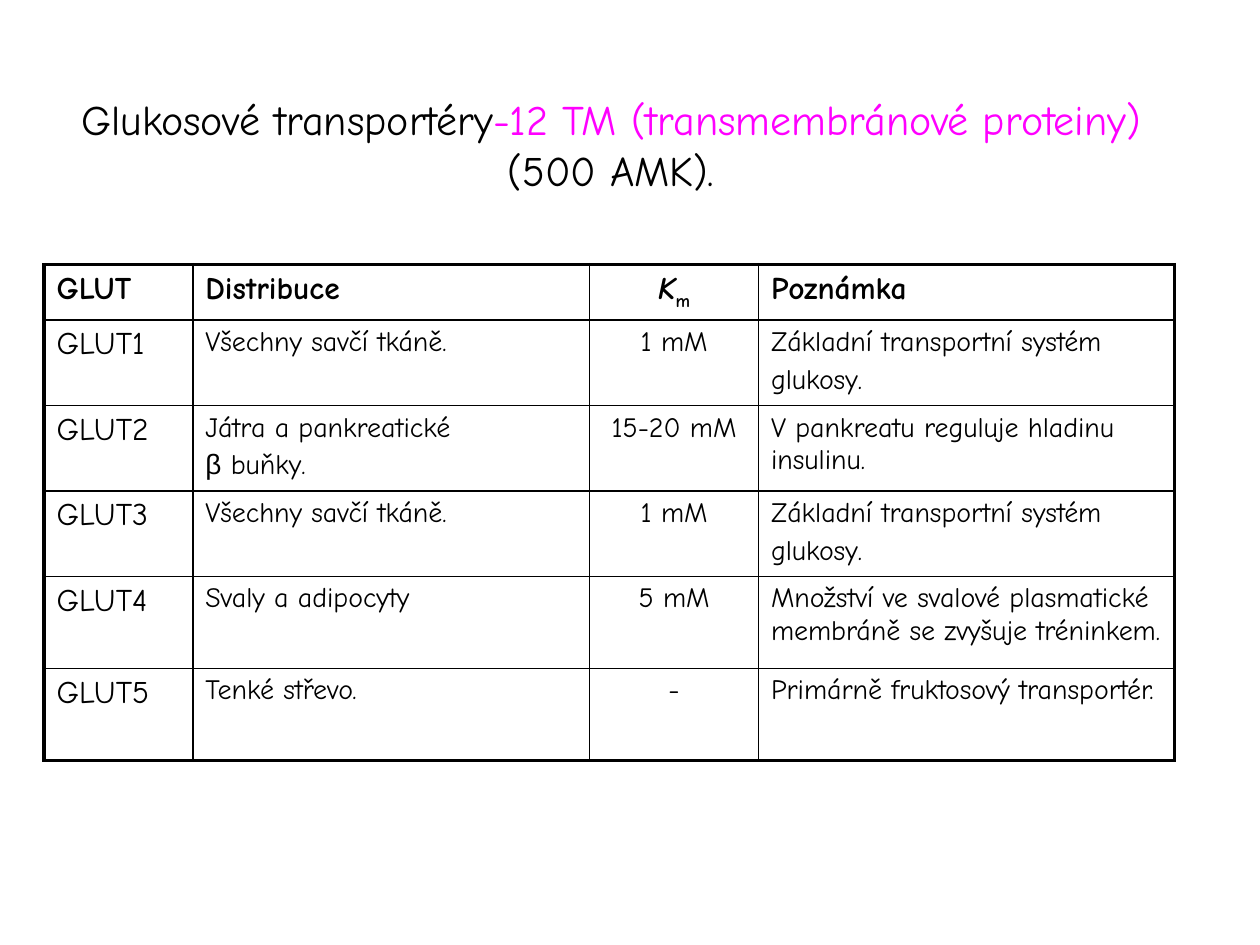
import pptx
import pptx.util
import pptx.dml.color
import pptx.enum.text
import pptx.oxml
import pptx.oxml.ns

Inches = pptx.util.Inches
Pt = pptx.util.Pt
ALIGN = pptx.enum.text.PP_ALIGN

COLORS = {"text": "000000", "accent": "FF00FF", "border": "000000"}
THICK, THIN = 2.25, 1
COLUMN_WIDTHS = [1.18, 3.15, 1.34, 3.3]
ROW_HEIGHTS = [0.44, 0.66, 0.66, 0.66, 0.73, 0.73]
COLUMN_ALIGNMENT = [ALIGN.LEFT, ALIGN.LEFT, ALIGN.CENTER, ALIGN.LEFT]

TITLE = [
    ("Glukosové transportéry", {}),
    ("-12 TM (transmembránové proteiny)", {"color": "accent"}),
    (" (500 AMK).", {}),
]
BASIC_SYSTEM = ["Základní transportní systém", "glukosy."]
# A cell is a list of paragraphs; a paragraph is a string or a list of spans.
ROWS = [
    [["GLUT"], ["Distribuce"],
     [[("K", {"italic": True}), ("m", {"baseline": -25000})]], ["Poznámka"]],
    [["GLUT1"], ["Všechny savčí tkáně."], ["1 mM"], BASIC_SYSTEM],
    [["GLUT2"],
     ["Játra a pankreatické", [("β", {"name": "Arial"}), (" buňky.", {})]],
     ["15-20 mM"], ["V pankreatu reguluje hladinu insulinu."]],
    [["GLUT3"], ["Všechny savčí tkáně."], ["1 mM"], BASIC_SYSTEM],
    [["GLUT4"], ["Svaly a adipocyty"], ["5 mM"],
     ["Množství ve svalové plasmatické membráně se zvyšuje tréninkem."]],
    [["GLUT5"], ["Tenké střevo."], ["-"], ["Primárně fruktosový transportér."]],
]


class SlideBuilder:
    font_name = "Comic Neue"

    def __init__(self, slide):
        self.slide = slide

    def write_paragraph(self, para, spans, alignment, **style):
        """Add spans to a paragraph; each span's values override the style."""
        para.alignment = alignment
        if isinstance(spans, str):
            spans = [(spans, {})]
        for text, changes in spans:
            values = {"name": self.font_name, "color": "text", **style, **changes}
            color = values.pop("color")
            baseline = values.pop("baseline", None)
            span = para.add_run()
            span.text = text
            for name, value in values.items():
                setattr(span.font, name, value)
            span.font.color.rgb = pptx.dml.color.RGBColor.from_string(COLORS[color])
            if baseline is not None:
                span._r.get_or_add_rPr().set("baseline", str(baseline))

    def add_title(self, spans, left, top, width, height):
        box = self.slide.shapes.add_textbox(
            Inches(left), Inches(top), Inches(width), Inches(height))
        frame = box.text_frame
        frame.word_wrap = True
        frame.vertical_anchor = pptx.enum.text.MSO_ANCHOR.MIDDLE
        self.write_paragraph(frame.paragraphs[0], spans, ALIGN.CENTER, size=Pt(24))

    def set_borders(self, cell, widths):
        """Draw cell borders from widths in points, keyed L, R, T and B."""
        properties = cell._tc.get_or_add_tcPr()
        for side, width in widths.items():
            properties.append(pptx.oxml.parse_xml(
                f'<a:ln{side} {pptx.oxml.ns.nsdecls("a")} w="{Pt(width)}">'
                f'<a:solidFill><a:srgbClr val="{COLORS["border"]}"/></a:solidFill>'
                f'</a:ln{side}>'))

    def fill_cell(self, cell, paragraphs, alignment, size, bold):
        frame = cell.text_frame
        for index, spans in enumerate(paragraphs):
            para = frame.add_paragraph() if index else frame.paragraphs[0]
            para.space_before = Pt(size * 0.2)
            self.write_paragraph(para, spans, alignment, size=Pt(size), bold=bold)

    def add_table(self, rows, left, top):
        last_row, last_column = len(ROW_HEIGHTS) - 1, len(COLUMN_WIDTHS) - 1
        table = self.slide.shapes.add_table(
            len(ROW_HEIGHTS), len(COLUMN_WIDTHS), Inches(left), Inches(top),
            Inches(sum(COLUMN_WIDTHS)), Inches(sum(ROW_HEIGHTS))).table
        table.first_row = table.horz_banding = False
        for column, width in zip(table.columns, COLUMN_WIDTHS):
            column.width = Inches(width)
        for row, height in zip(table.rows, ROW_HEIGHTS):
            row.height = Inches(height)
        for r, row in enumerate(rows):
            for c, paragraphs in enumerate(row):
                cell = table.cell(r, c)
                self.set_borders(cell, {
                    "L": THICK if c == 0 else THIN,
                    "R": THICK if c == last_column else THIN,
                    "T": THICK if r == 0 else THIN,
                    "B": THICK if r == last_row else THIN,
                })
                cell.fill.background()
                size = 18 if r == 0 or c == 0 else 16
                self.fill_cell(cell, paragraphs, COLUMN_ALIGNMENT[c], size, r == 0)


def main():
    deck = pptx.Presentation()
    deck.slide_width, deck.slide_height = Inches(10), Inches(7.5)
    builder = SlideBuilder(deck.slides.add_slide(deck.slide_layouts[6]))
    builder.add_title(TITLE, 0.35, 0.68, 9, 0.93)
    builder.add_table(ROWS, 0.35, 2.1)
    deck.save("out.pptx")


if __name__ == "__main__":
    main()
